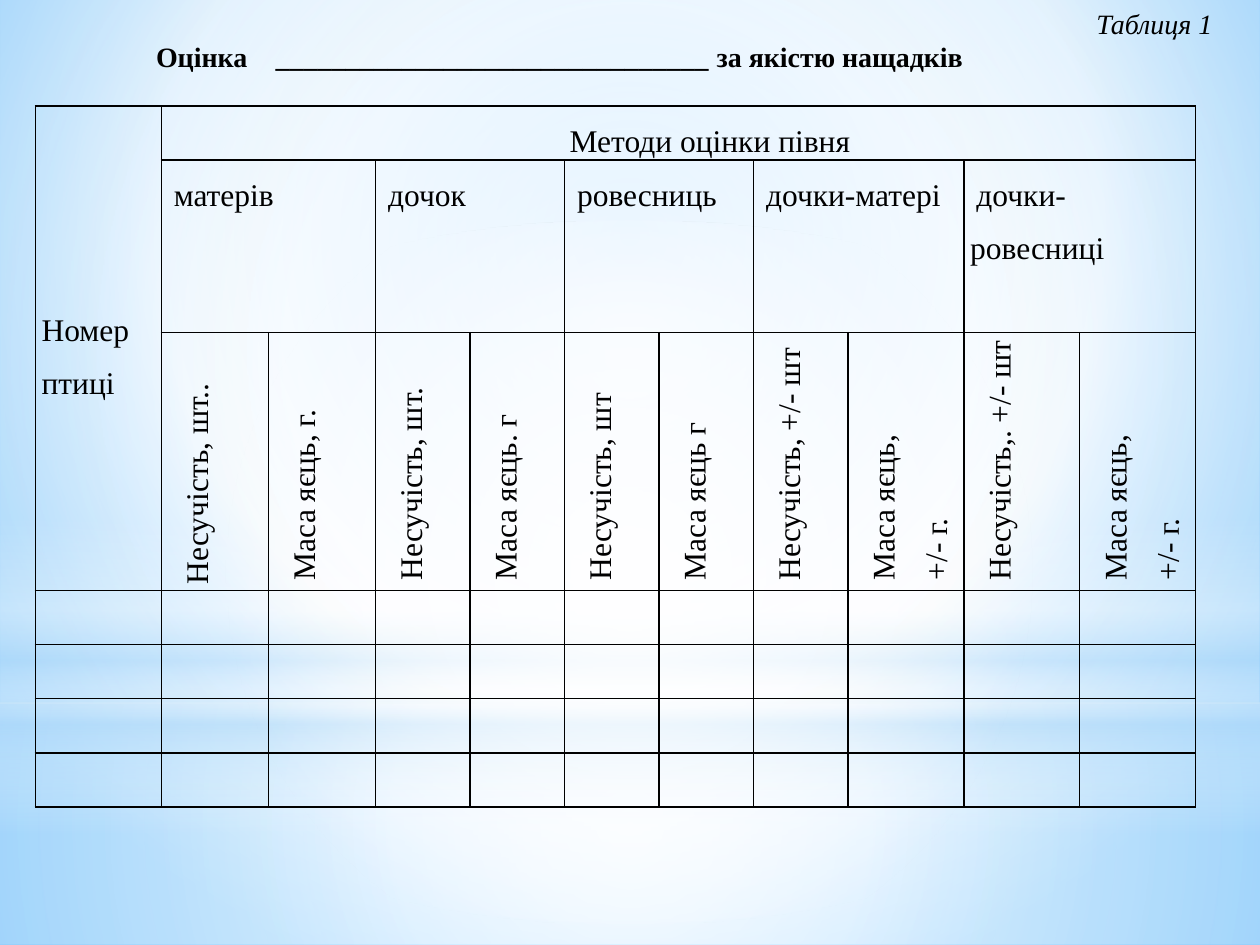
from dataclasses import dataclass

from pptx import Presentation, util as u
from pptx.dml.color import RGBColor
from pptx.enum import shapes, text
from pptx.oxml import parse_xml
from pptx.oxml.ns import nsdecls, qn

Inches = u.Inches


@dataclass(frozen=True)
class Theme:
    font: str = "Times New Roman"
    ink: str = "000000"
    white: str = "FFFFFF"
    haze: str = "B4DCFA"
    sky: str = "9ED5FF"
    deep: str = "5BB9FF"
    title: int = 16
    body: int = 18
    border: int = 1


T = Theme()

COLS = [1] + [0.85] * 2 + [0.75] * 5 + [0.92] * 3
ROWS = [0.43, 1.37, 1.63] + [0.43] * 4
GROUPS = ["матерів", "дочок", "ровесниць", "дочки-матері", "дочки-ровесниці"]
MEASURES = [
    ["Несучість, шт.."], ["Маса яєць, г."],
    ["Несучість, шт."], ["Маса яєць. г"],
    ["Несучість, шт"], ["Маса яєць г"],
    ["Несучість, +/- шт"], ["Маса яєць,", "+/- г."],
    ["Несучість,. +/- шт"], ["Маса яєць,", "+/- г."],
]


def set_gradient(fill, root, stops, direction):
    fill.solid()
    gs = "".join(
        f'<a:gs pos="{pos * 1000}"><a:srgbClr val="{color}">'
        f'<a:alpha val="{alpha * 1000}"/></a:srgbClr></a:gs>'
        for pos, color, alpha in stops)
    grad = parse_xml(
        f'<a:gradFill {nsdecls("a")} rotWithShape="1">'
        f'<a:gsLst>{gs}</a:gsLst>{direction}</a:gradFill>')
    solid = root.find(".//" + qn("a:solidFill"))
    solid.getparent().replace(solid, grad)


def radial(l=50, t=50, r=50, b=50):
    return (f'<a:path path="circle"><a:fillToRect l="{l * 1000}" t="{t * 1000}" '
            f'r="{r * 1000}" b="{b * 1000}"/></a:path>')


def add_glow(s, kind, top, height, stops, direction):
    sp = s.shapes.add_shape(kind, 0, Inches(top), Inches(10), Inches(height))
    sp.shadow.inherit = False
    sp.line.fill.background()
    set_gradient(sp.fill, sp._element, stops, direction)


def add_backdrop(s):
    set_gradient(s.background.fill, s._element,
                 [(0, T.sky, 100), (60, T.white, 100), (100, T.deep, 100)],
                 radial(20, 10, 20, 60))
    rect, oval = shapes.MSO_SHAPE.RECTANGLE, shapes.MSO_SHAPE.OVAL
    add_glow(s, rect, 5.58, 1.92,
             [(0, T.white, 91), (37, T.white, 76), (100, T.haze, 79)], radial())
    add_glow(s, rect, 0, 5.58,
             [(0, T.white, 89), (48, T.white, 62), (100, T.haze, 79)], radial())
    add_glow(s, rect, 4.12, 2.5,
             [(0, T.white, 0), (29, T.white, 30), (45, T.haze, 40),
              (55, T.white, 26), (65, T.haze, 60), (100, T.white, 0)],
             '<a:lin ang="5400000" scaled="0"/>')
    add_glow(s, oval, 1.75, 5.58,
             [(0, T.white, 100), (56, T.white, 0)], radial())


def add_run(p, words, size, bold=False, italic=False):
    r = p.add_run()
    r.text = words
    r.font.name = T.font
    r.font.size = u.Pt(size)
    r.font.bold = bold
    r.font.italic = italic
    r.font.color.rgb = RGBColor.from_string(T.ink)


def set_indent(p, left, first):
    pPr = p._p.get_or_add_pPr()
    pPr.set("marL", str(Inches(left)))
    pPr.set("indent", str(Inches(first)))
    return pPr


def add_tabs(pPr, stops):
    tabs = "".join(f'<a:tab pos="{Inches(x)}" algn="l"/>' for x in stops)
    pPr.append(parse_xml(f'<a:tabLst {nsdecls("a")}>{tabs}</a:tabLst>'))


def write_cell(cell, lines, left=0, first=0, align=None):
    cell.margin_left = cell.margin_right = Inches(0.05)
    cell.margin_top, cell.margin_bottom = Inches(0.01), 0
    tf = cell.text_frame
    for i, line in enumerate(lines):
        p = tf.add_paragraph() if i else tf.paragraphs[0]
        p.line_spacing = 1.5
        p.alignment = align
        set_indent(p, left, first)
        add_run(p, line, T.body)


def style_cell(cell):
    tcPr = cell._tc.get_or_add_tcPr()
    for side in ("lnL", "lnR", "lnT", "lnB"):
        tcPr.append(parse_xml(
            f'<a:{side} {nsdecls("a")} w="{u.Pt(T.border)}"><a:solidFill>'
            f'<a:srgbClr val="{T.ink}"/></a:solidFill></a:{side}>'))
    cell.fill.background()


def add_score_table(s):
    table = s.shapes.add_table(
        len(ROWS), len(COLS), Inches(0.28), Inches(0.84),
        Inches(sum(COLS)), Inches(sum(ROWS))).table
    table.first_row = table.horz_banding = False
    for col, width in zip(table.columns, COLS):
        col.width = Inches(width)
    for row, height in zip(table.rows, ROWS):
        row.height = Inches(height)
    for cell in table.iter_cells():
        style_cell(cell)

    bird = table.cell(0, 0)
    bird.merge(table.cell(2, 0))
    bird.vertical_anchor = text.MSO_ANCHOR.MIDDLE
    write_cell(bird, ["Номер птиці"])

    methods = table.cell(0, 1)
    methods.merge(table.cell(0, 10))
    write_cell(methods, ["Методи оцінки півня"], 0, 0.5, text.PP_ALIGN.CENTER)

    for i, group in enumerate(GROUPS):
        cell = table.cell(1, 2 * i + 1)
        cell.merge(table.cell(1, 2 * i + 2))
        write_cell(cell, [group], 0, 0.05)
    for i, lines in enumerate(MEASURES):
        cell = table.cell(2, i + 1)
        cell._tc.get_or_add_tcPr().set("vert", "vert270")
        write_cell(cell, lines, 0.08 if i else 0, -0.05)


def add_heading(s):
    tf = s.shapes.add_textbox(
        Inches(0.59), 0, Inches(9.13), Inches(0.64)).text_frame
    tf.word_wrap = True
    p = tf.paragraphs[0]
    p.alignment = text.PP_ALIGN.RIGHT
    set_indent(p, 0, 0.5)
    add_run(p, "Таблиця 1", T.title, italic=True)
    p = tf.add_paragraph()
    add_tabs(set_indent(p, 0, 0.55), [1.39, 5.27])
    add_run(p, "Оцінка\t" + "_" * 31 + "\tза якістю нащадків", T.title, bold=True)


def main():
    prs = Presentation()
    prs.slide_width, prs.slide_height = Inches(10), Inches(7.5)
    s = prs.slides.add_slide(prs.slide_layouts[6])
    add_backdrop(s)
    add_score_table(s)
    add_heading(s)
    prs.save("out.pptx")


if __name__ == "__main__":
    main()
